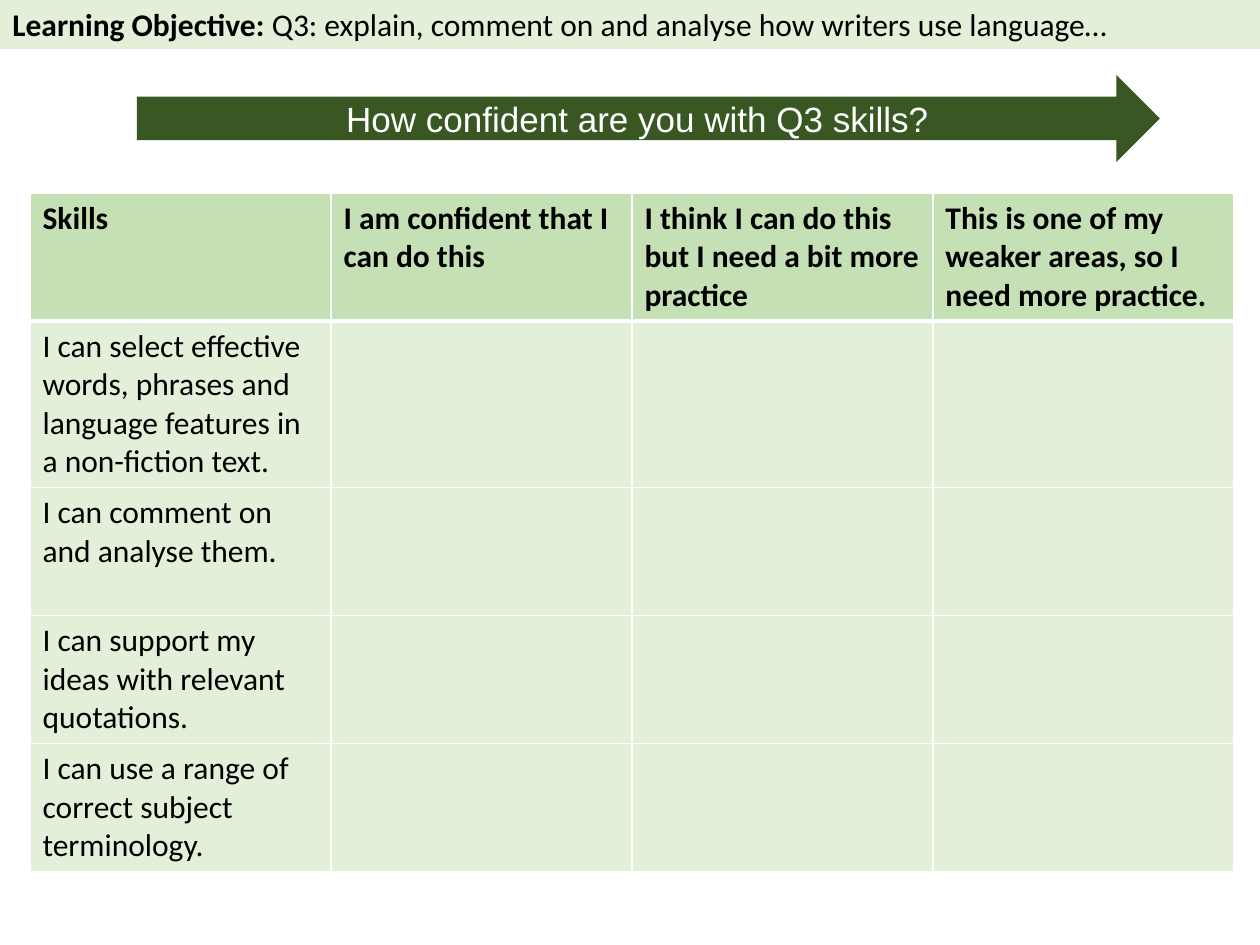
"""Build a self-assessment slide with a title bar, an arrow and a skills table."""
from lxml import etree
from pptx import Presentation
from pptx import util as u
from pptx.dml.color import RGBColor
from pptx.enum import shapes, text
from pptx.oxml.ns import qn

PX = 914400 / 126
WHITE = RGBColor(0xFF, 0xFF, 0xFF)
BLACK = RGBColor(0x00, 0x00, 0x00)
DARK = RGBColor(0x38, 0x57, 0x23)
MID = RGBColor(0xC5, 0xE0, 0xB4)
PALE = RGBColor(0xE2, 0xF0, 0xD9)

HEADS = [
    "Skills",
    "I am confident that I can do this",
    "I think I can do this but I need a bit more practice",
    "This is one of my weaker areas, so I need more practice.",
]
SKILLS = [
    "I can select effective words, phrases and language features in a non-fiction text.",
    "I can comment on and analyse them.",
    "I can support my ideas with relevant quotations.",
    "I can use a range of correct subject terminology.",
]
HIGHS = [128, 166, 128, 128, 128]
WIDE = 301


def box(kind, fill, *px):
    shape = slide.shapes.add_shape(kind, *[round(n * PX) for n in px])
    shape.shadow.inherit = False
    shape.fill.solid()
    shape.fill.fore_color.rgb = fill
    shape.line.fill.background()
    return shape


def write(para, words, size=18, face="Calibri", color=BLACK, bold=False):
    run = para.add_run()
    run.text = words
    run.font.size = u.Pt(size)
    run.font.name = face
    run.font.bold = bold
    run.font.color.rgb = color


deck = Presentation()
deck.slide_width = u.Inches(10)
deck.slide_height = u.Inches(7.5)
slide = deck.slides.add_slide(deck.slide_layouts[6])

arrow = box(shapes.MSO_SHAPE.RIGHT_ARROW, DARK, 137, 75, 1023, 87)
arrow.text_frame.vertical_anchor = text.MSO_ANCHOR.MIDDLE
para = arrow.text_frame.paragraphs[0]
para.alignment = text.PP_ALIGN.CENTER
write(para, "How confident are you with Q3 skills?", 20, "Arial", WHITE)

frame = slide.shapes.add_table(
    len(HIGHS), len(HEADS),
    *[round(n * PX) for n in (30, 193, WIDE * len(HEADS), sum(HIGHS))])
table = frame.table
for col in table.columns:
    col.width = round(WIDE * PX)

rows = [HEADS] + [[skill, "", "", ""] for skill in SKILLS]
for r, (high, words) in enumerate(zip(HIGHS, rows)):
    table.rows[r].height = round(high * PX)
    for c, word in enumerate(words):
        cell = table.cell(r, c)
        props = cell._tc.get_or_add_tcPr()
        for side in "LRTB":
            thick = 3 if (r, side) in [(0, "B"), (1, "T")] else 1
            line = etree.SubElement(props, qn("a:ln" + side), w=str(u.Pt(thick)))
            solid = etree.SubElement(line, qn("a:solidFill"))
            etree.SubElement(solid, qn("a:srgbClr"), val=str(WHITE))
        cell.fill.solid()
        cell.fill.fore_color.rgb = PALE if r else MID
        if word:
            write(cell.text_frame.paragraphs[0], word, bold=r == 0)

bar = box(shapes.MSO_SHAPE.RECTANGLE, PALE, 0, -1, 1260, 50)
bar.text_frame.vertical_anchor = text.MSO_ANCHOR.TOP
para = bar.text_frame.paragraphs[0]
para.alignment = text.PP_ALIGN.LEFT
write(para, "Learning Objective: ", bold=True)
write(para, "Q3: explain, comment on and analyse how writers use language…")

deck.save("out.pptx")
